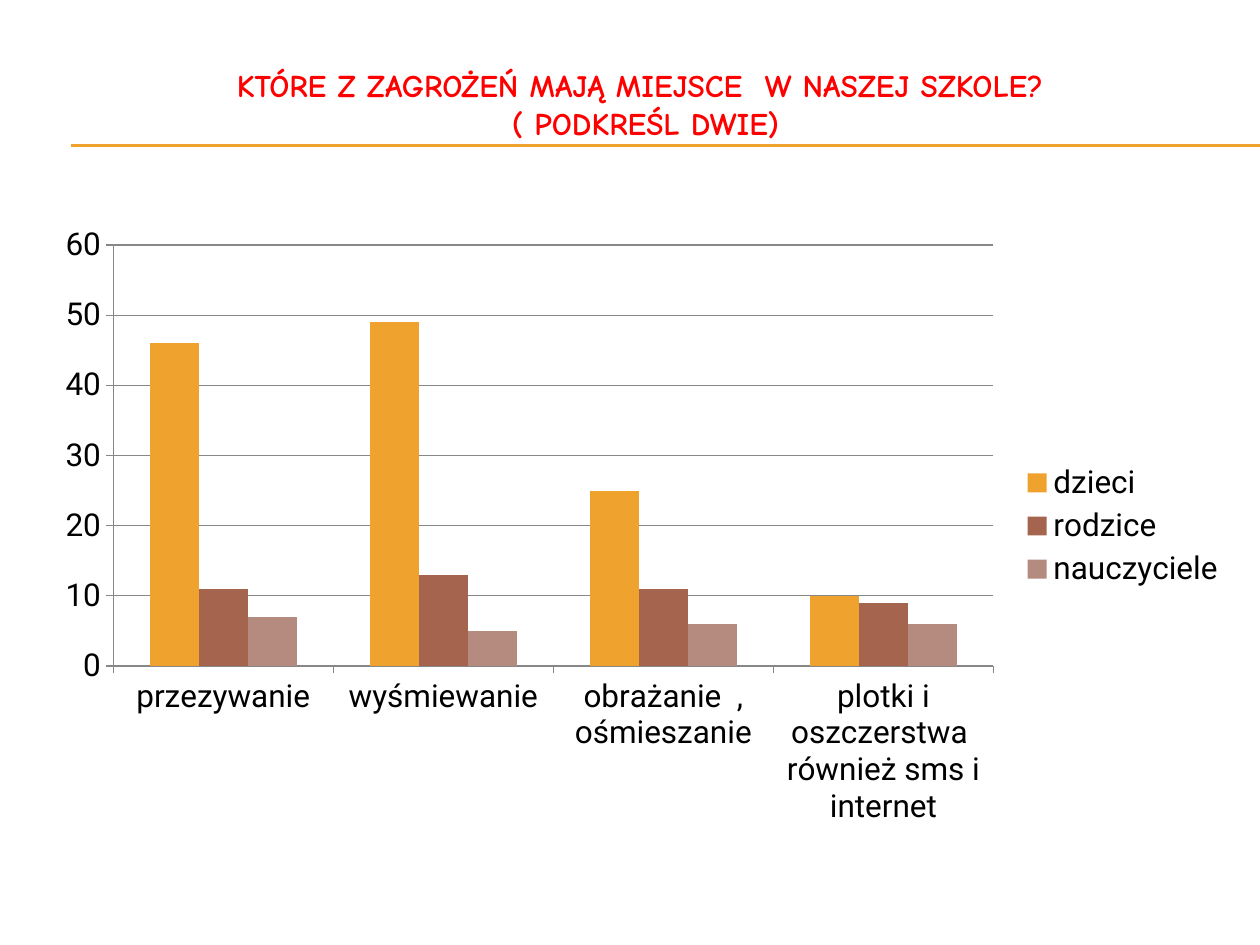
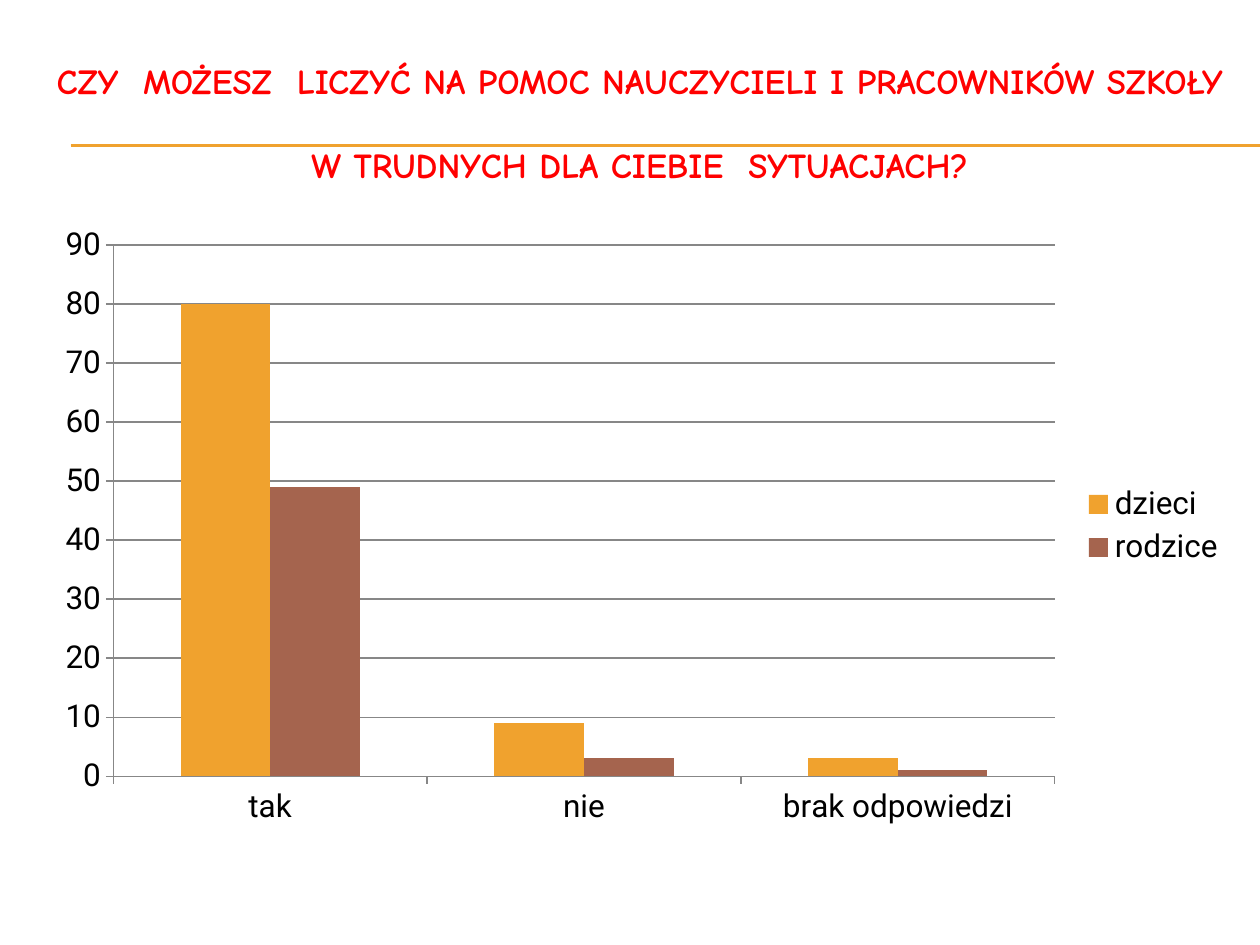
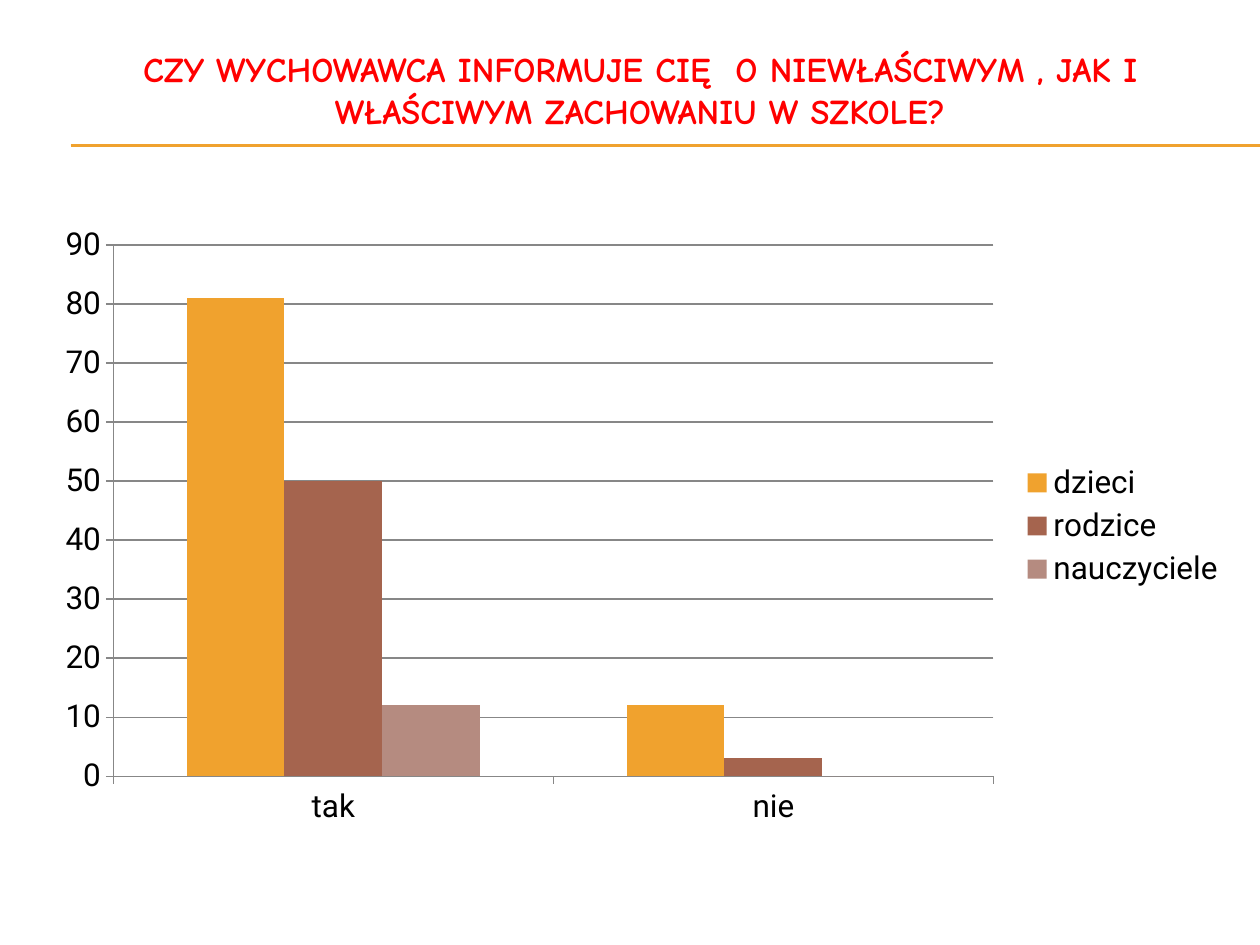
from pptx import Presentation
from pptx.chart.data import CategoryChartData
from pptx.dml.color import RGBColor
from pptx.enum.chart import XL_CHART_TYPE as ChartType, XL_LEGEND_POSITION as LegendPos, XL_TICK_MARK as Tick
from pptx.enum.shapes import MSO_CONNECTOR as Connector
from pptx.enum.text import MSO_ANCHOR as Anchor, PP_ALIGN as Align
from pptx.oxml.ns import qn
from pptx.util import Inches, Pt
from lxml.etree import SubElement

RED = RGBColor(0xFF, 0x00, 0x00)
BLACK = RGBColor(0x00, 0x00, 0x00)
GREY = RGBColor(0x87, 0x87, 0x87)
AMBER = RGBColor(0xF0, 0xA2, 0x2E)
RUST = RGBColor(0xA5, 0x64, 0x4E)
ROSE = RGBColor(0xB5, 0x8B, 0x80)

TITLE_FONT = "Comic Neue"
CHART_FONT = "Roboto"
GROUP_COLORS = {"dzieci": AMBER, "rodzice": RUST, "nauczyciele": ROSE}

# Survey questions: title lines and their format, then the answers by group
QUESTIONS = [
    {
        "title": ["KTÓRE Z ZAGROŻEŃ MAJĄ MIEJSCE  W NASZEJ SZKOLE?",
                  " ( PODKREŚL DWIE)"],
        "format": {"top": 0.5, "height": 0.92, "size": 18, "lift": 0.27},
        "answers": ["przezywanie", "wyśmiewanie", "obrażanie  , ośmieszanie",
                    "plotki i oszczerstwa  również sms i internet"],
        "votes": {"dzieci": [46, 49, 25, 10], "rodzice": [11, 13, 11, 9],
                  "nauczyciele": [7, 5, 6, 6]},
        "axis_max": 60,
    },
    {
        "title": ["CZY  MOŻESZ  LICZYĆ NA POMOC NAUCZYCIELI I PRACOWNIKÓW SZKOŁY",
                  "W TRUDNYCH DLA CIEBIE  SYTUACJACH?"],
        "format": {"top": 0.84, "height": 0.58, "size": 20, "lift": 0.32, "gap": 24},
        "answers": ["tak", "nie", "brak odpowiedzi"],
        "votes": {"dzieci": [80, 9, 3], "rodzice": [49, 3, 1]},
        "axis_max": 90,
    },
    {
        "title": ["CZY WYCHOWAWCA INFORMUJE CIĘ  O NIEWŁAŚCIWYM , JAK I "
                  "WŁAŚCIWYM ZACHOWANIU W SZKOLE?"],
        "format": {"top": 0.5, "height": 0.92, "size": 19.8, "lift": 0.5},
        "answers": ["tak", "nie"],
        "votes": {"dzieci": [81, 12], "rodzice": [50, 3], "nauczyciele": [12, 0]},
        "axis_max": 90,
    },
]

# Shared layout, in inches
SLIDE_WIDTH, SLIDE_HEIGHT = 10, 7.5
LEFT, WIDTH = 0.33, 9.5
CHART_TOP, CHART_HEIGHT = 1.7, 4.95
RULE_LEFT, RULE_TOPS = 0.56, (1.15, 1.16)
INSET = 0.05


def add_rules(slide):
    for top in RULE_TOPS:
        rule = slide.shapes.add_connector(
            Connector.STRAIGHT, Inches(RULE_LEFT), Inches(top), Inches(SLIDE_WIDTH), Inches(top))
        rule.line.color.rgb = AMBER
        rule.line.width = Pt(0.75)
        SubElement(rule._element.spPr, qn("a:effectLst"))


def add_text(slide, lines, *, top, height, size, lift=0, gap=0, color=RED, font=TITLE_FONT):
    """Centred bold lines; lift is extra room below them, gap the points between them."""
    box = slide.shapes.add_textbox(Inches(LEFT), Inches(top), Inches(WIDTH), Inches(height))
    frame = box.text_frame
    frame.word_wrap = True
    frame.vertical_anchor = Anchor.MIDDLE
    frame.margin_left = frame.margin_right = frame.margin_top = Inches(INSET)
    frame.margin_bottom = Inches(INSET + lift)
    for i, line in enumerate(lines):
        paragraph = frame.add_paragraph() if i else frame.paragraphs[0]
        paragraph.alignment = Align.CENTER
        paragraph.space_before = Pt(gap if i else 0)
        run = paragraph.add_run()
        run.text = line
        run.font.name = font
        run.font.size = Pt(size)
        run.font.bold = True
        run.font.color.rgb = color


def add_votes_chart(slide, answers, votes, axis_max):
    data = CategoryChartData(number_format="General")
    data.categories = answers
    for group, counts in votes.items():
        data.add_series(group, counts)
    chart = slide.shapes.add_chart(
        ChartType.COLUMN_CLUSTERED, Inches(LEFT), Inches(CHART_TOP),
        Inches(WIDTH), Inches(CHART_HEIGHT), data).chart
    chart.has_title = False
    chart.font.name = CHART_FONT
    chart.font.size = Pt(18)
    chart.font.color.rgb = BLACK

    # Columns
    plot = chart.plots[0]
    plot.vary_by_categories = False
    plot.gap_width = 150
    for series in plot.series:
        series.format.fill.solid()
        series.format.fill.fore_color.rgb = GROUP_COLORS[series.name]

    # Axes and grid
    for axis in (chart.category_axis, chart.value_axis):
        axis.major_tick_mark = Tick.OUTSIDE
        axis.minor_tick_mark = Tick.NONE
        axis.format.line.color.rgb = GREY
    scale = chart.value_axis
    scale.minimum_scale, scale.maximum_scale, scale.major_unit = 0, axis_max, 10
    scale.has_major_gridlines = True
    scale.major_gridlines.format.line.color.rgb = GREY

    # Legend
    chart.has_legend = True
    chart.legend.position = LegendPos.RIGHT
    chart.legend.include_in_layout = False


def main():
    deck = Presentation()
    deck.slide_width, deck.slide_height = Inches(SLIDE_WIDTH), Inches(SLIDE_HEIGHT)
    for question in QUESTIONS:
        slide = deck.slides.add_slide(deck.slide_layouts[6])
        add_rules(slide)
        add_text(slide, question["title"], **question["format"])
        add_votes_chart(slide, question["answers"], question["votes"], question["axis_max"])
    deck.save("out.pptx")


if __name__ == "__main__":
    main()
